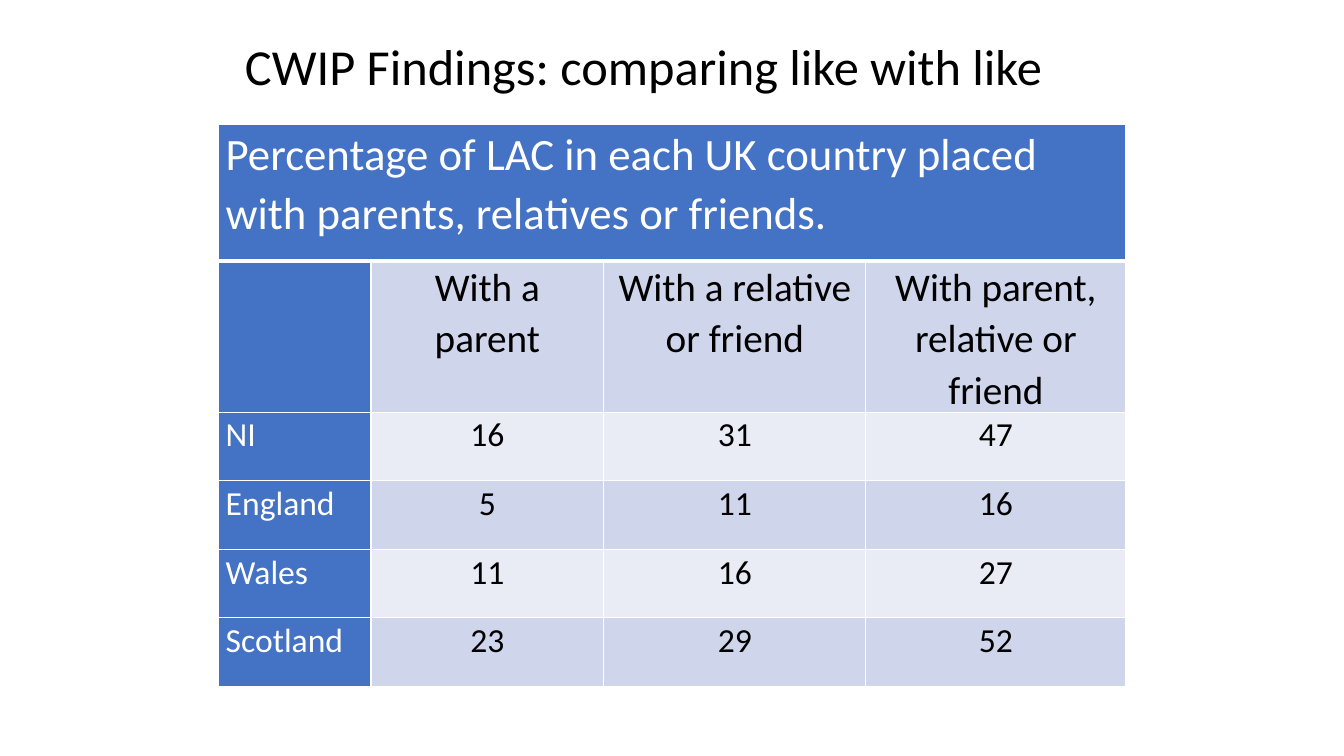
from dataclasses import dataclass

from lxml.etree import SubElement
from pptx import Presentation
from pptx.dml.color import RGBColor
from pptx.enum.text import MSO_ANCHOR, MSO_AUTO_SIZE, PP_ALIGN
from pptx.oxml.ns import qn
from pptx.util import Pt

FONT = "Calibri"
WHITE, BLACK = "FFFFFF", "000000"
BLUE, BAND_DARK, BAND_LIGHT = "4472C4", "CFD5EA", "E9EBF5"
TABLE_LEFT, TABLE_TOP = 156.24, 88.56
COL_WIDTHS = [108.72, 166.32, 187.2, 185.76]
TITLE_ROW, DATA_ROW = 97.92, 48.96


@dataclass
class TableRow:
    texts: list[str]
    height: float
    size: float
    band: str


ROWS = [
    TableRow(["Percentage of LAC in each UK country placed with parents, relatives or friends.",
              "", "", ""], TITLE_ROW, 32, BLUE),
    TableRow(["", "With a parent", "With a relative or friend",
              "With parent, relative or friend"], TITLE_ROW, 28, BAND_DARK),
    TableRow(["NI", "16", "31", "47"], DATA_ROW, 24, BAND_LIGHT),
    TableRow(["England", "5", "11", "16"], DATA_ROW, 24, BAND_DARK),
    TableRow(["Wales", "11", "16", "27"], DATA_ROW, 24, BAND_LIGHT),
    TableRow(["Scotland", "23", "29", "52"], DATA_ROW, 24, BAND_DARK),
]


def rgb(color: str) -> RGBColor:
    return RGBColor.from_string(color)


def add_run(p, text: str, size: float, color: str) -> None:
    r = p.add_run()
    r.text = text
    r.font.name = FONT
    r.font.size = Pt(size)
    r.font.bold = False
    r.font.color.rgb = rgb(color)


def set_borders(cell, bottom: float) -> None:
    tc_pr = cell._tc.get_or_add_tcPr()
    for side, width in (("L", 1), ("R", 1), ("T", 1), ("B", bottom)):
        ln = SubElement(tc_pr, qn(f"a:ln{side}"), w=str(Pt(width)))
        fill = SubElement(ln, qn("a:solidFill"))
        SubElement(fill, qn("a:srgbClr"), val=WHITE)


def fill_cell(cell, text: str, row: TableRow, is_label: bool, bottom: float) -> None:
    set_borders(cell, bottom)
    cell.fill.solid()
    cell.fill.fore_color.rgb = rgb(BLUE if is_label else row.band)
    cell.margin_left = cell.margin_right = Pt(5)
    cell.margin_top = cell.margin_bottom = Pt(0)
    if text:
        p = cell.text_frame.paragraphs[0]
        p.alignment = PP_ALIGN.LEFT if is_label else PP_ALIGN.CENTER
        p.line_spacing = 1.07
        add_run(p, text, row.size, WHITE if is_label else BLACK)


def add_title(s, text: str) -> None:
    sp = s.shapes.title
    sp.left, sp.top, sp.width, sp.height = Pt(167.76), Pt(21.6), Pt(635.04), Pt(51.12)
    tf = sp.text_frame
    tf.word_wrap = True
    tf.auto_size = MSO_AUTO_SIZE.SHAPE_TO_FIT_TEXT
    tf.vertical_anchor = MSO_ANCHOR.TOP
    p = tf.paragraphs[0]
    p.alignment = PP_ALIGN.LEFT
    add_run(p, text, 36, BLACK)


def add_findings_table(s) -> None:
    frame = s.shapes.add_table(len(ROWS), len(COL_WIDTHS), Pt(TABLE_LEFT), Pt(TABLE_TOP),
                               Pt(sum(COL_WIDTHS)), Pt(sum(row.height for row in ROWS)))
    table = frame.table
    table.first_row = table.horz_banding = False
    for column, width in zip(table.columns, COL_WIDTHS):
        column.width = Pt(width)
    table.cell(0, 0).merge(table.cell(0, len(COL_WIDTHS) - 1))
    for i, row in enumerate(ROWS):
        table.rows[i].height = Pt(row.height)
        for j, text in enumerate(row.texts):
            fill_cell(table.cell(i, j), text, row, j == 0, 3 if i == 0 else 1)


def main() -> None:
    prs = Presentation()
    prs.slide_width, prs.slide_height = Pt(960), Pt(540)
    s = prs.slides.add_slide(prs.slide_layouts[5])
    # Heading
    add_title(s, "CWIP Findings: comparing like with like")
    # Placement percentages by country
    add_findings_table(s)
    prs.save("out.pptx")


if __name__ == "__main__":
    main()
